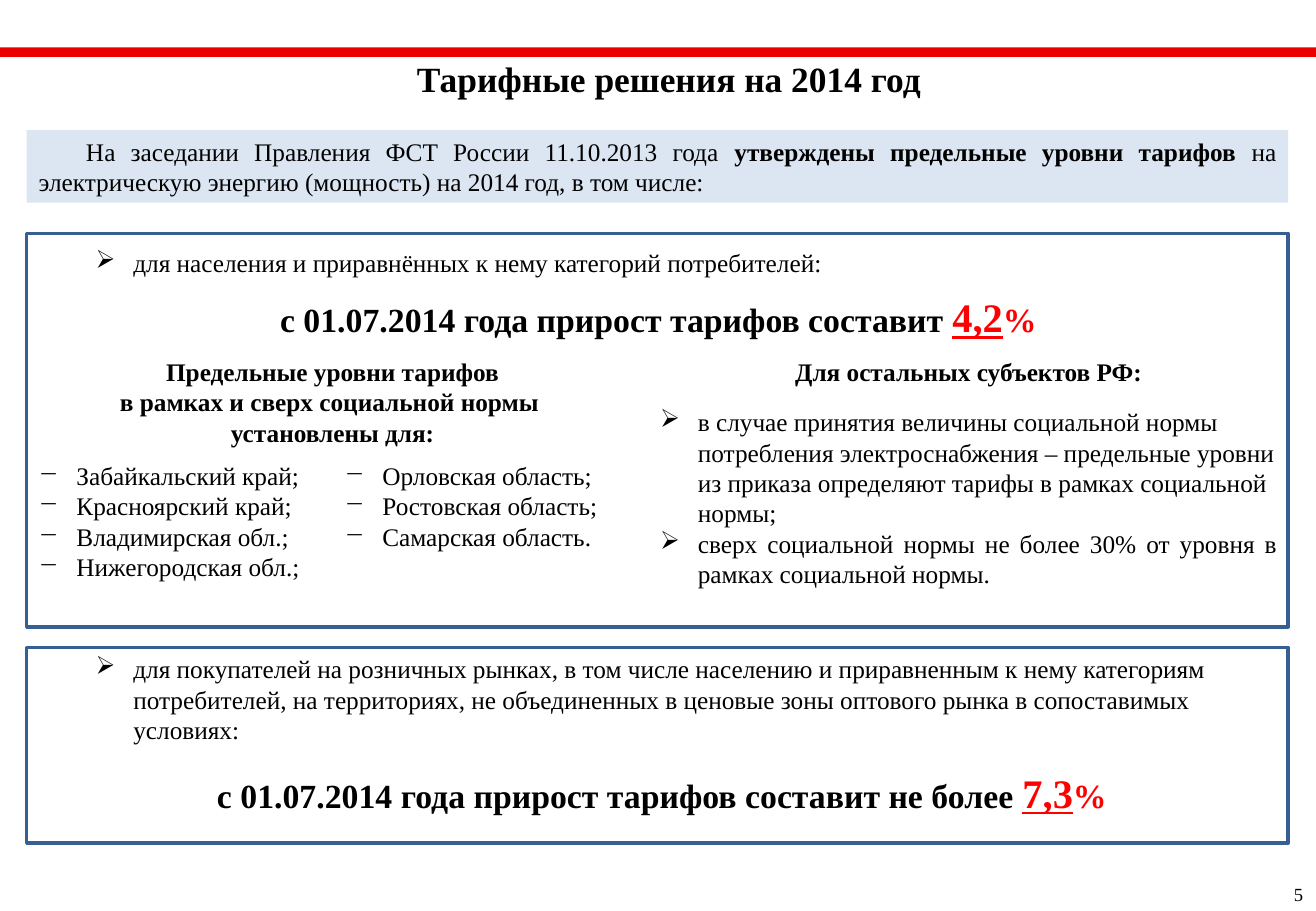
"""Builds the slide on the 2014 tariff decisions."""
from lxml import etree
from pptx import Presentation
from pptx import util as u
from pptx.dml.color import RGBColor
from pptx.enum import shapes, text
from pptx.oxml.ns import qn

COLORS = {"red_bar": "EB0000", "pale_blue": "DCE6F2", "frame": "376092",
          "black": "000000", "accent": "FF0000"}
STYLES = {
    "body": {"size": u.Pt(15), "bold": False},
    "strong": {"size": u.Pt(15), "bold": True},
    "title": {"size": u.Pt(21), "bold": True},
    "headline": {"size": u.Pt(20), "bold": True},
    "figure": {"size": u.Pt(24), "bold": True, "underline": True},
    "percent": {"size": u.Pt(20), "bold": True},
    "number": {"size": u.Pt(11), "bold": False},
}
CENTER, JUSTIFY = text.PP_ALIGN.CENTER, text.PP_ALIGN.JUSTIFY
LEFT, WIDTH = 0.56, 26.39
HANG = 0.79


def add_box(left, top, width, height, fill=None, line=None):
    shape = slide.shapes.add_shape(shapes.MSO_SHAPE.RECTANGLE, u.Cm(left), u.Cm(top),
                                   u.Cm(width), u.Cm(height))
    shape.shadow.inherit = False
    if fill:
        shape.fill.solid()
        shape.fill.fore_color.rgb = RGBColor.from_string(COLORS[fill])
    else:
        shape.fill.background()
    if line:
        shape.line.color.rgb = RGBColor.from_string(COLORS[line])
        shape.line.width = u.Pt(2)
    else:
        shape.line.fill.background()
    return shape


def write(shape, paragraphs, wrap=True, anchor=text.MSO_ANCHOR.TOP):
    frame = shape.text_frame
    frame.word_wrap, frame.vertical_anchor = wrap, anchor
    for index, (runs, layout) in enumerate(paragraphs):
        paragraph = frame.paragraphs[0] if index == 0 else frame.add_paragraph()
        paragraph.alignment = layout.get("align", text.PP_ALIGN.LEFT)
        if "before" in layout:
            paragraph.space_before = u.Pt(layout["before"])
        properties = paragraph._p.get_or_add_pPr()
        properties.set("marL", str(u.Cm(layout.get("margin", 0))))
        properties.set("indent", str(u.Cm(layout.get("indent", 0))))
        if "bullet" in layout:
            etree.SubElement(properties, qn("a:buChar")).set("char", layout["bullet"])
        for words, style in runs:
            run = paragraph.add_run()
            run.text = words
            run.font.name = "Times New Roman"
            color = "accent" if style in ("figure", "percent") else "black"
            run.font.color.rgb = RGBColor.from_string(COLORS[color])
            for name, value in STYLES[style].items():
                setattr(run.font, name, value)


presentation = Presentation()
presentation.slide_width, presentation.slide_height = u.Cm(27.53), u.Cm(19.05)
slide = presentation.slides.add_slide(presentation.slide_layouts[6])

add_box(0, 0.99, 27.53, 0.2, fill="red_bar")
intro = add_box(LEFT, 2.72, WIDTH, 1.52, fill="pale_blue")
write(intro, [([("На заседании Правления ФСТ России 11.10.2013 года ", "body"),
                ("утверждены предельные уровни тарифов ", "strong"),
                ("на электрическую энергию (мощность) на 2014 год, в том числе:", "body")],
               {"align": JUSTIFY, "indent": 0.99})], anchor=text.MSO_ANCHOR.MIDDLE)
for top, height in ((4.88, 8.23), (13.54, 4.09)):
    add_box(LEFT, top, WIDTH, height, line="frame")

centered = {"align": CENTER}
arrow = {"bullet": "➢", "margin": HANG, "indent": -HANG}
dash = {**arrow, "bullet": "−"}
deep_arrow = {**arrow, "margin": 1.98}

text_blocks = [
    ((2.36, 1.07, 23.27, 1.4), True,
     [([("Тарифные решения на 2014 год", "title")],
       {"align": CENTER, "margin": 0.13, "indent": -0.13})]),
    ((LEFT, 5.05, WIDTH, 0.89), True,
     [([("для населения и приравнённых к нему категорий потребителей:", "body")], deep_arrow)]),
    ((5.61, 5.99, 16.46, 1.7), False,
     [([("с 01.07.2014 года прирост тарифов составит ", "headline"),
        ("4,2", "figure"), ("%", "percent")], {})]),
    ((LEFT, 7.32, 12.8, 2.18), True,
     [([(line, "strong")], centered) for line in (
         "Предельные уровни тарифов", "в рамках и сверх социальной нормы ",
         "установлены для:")]),
    ((13.56, 7.32, 13.41, 5.64), True,
     [([("Для остальных субъектов РФ:", "strong")], centered),
      ([("в случае принятия величины социальной нормы потребления электроснабжения – "
         "предельные уровни из приказа определяют тарифы в рамках социальной нормы;", "body")],
       {**arrow, "before": 12}),
      ([("сверх социальной нормы не более 30% от уровня в рамках социальной нормы.", "body")],
       {**arrow, "align": JUSTIFY})]),
    ((LEFT, 13.54, WIDTH, 2.16), True,
     [([("для покупателей на розничных рынках, в том числе населению и приравненным к нему "
         "категориям потребителей, на территориях, не объединенных в ценовые зоны оптового "
         "рынка в сопоставимых условиях:", "body")], deep_arrow)]),
    ((4.29, 15.93, 19.28, 1.27), False,
     [([("с 01.07.2014 года прирост тарифов составит не более ", "headline"),
        ("7,3", "figure"), ("%", "percent")], {})]),
    ((26.82, 18.34, 0.71, 0.74), False, [([("5", "number")], {})]),
]
region_columns = [
    ("Забайкальский край;", "Красноярский край;", "Владимирская обл.;", "Нижегородская обл.;"),
    ("Орловская область;", "Ростовская область;", "Самарская область."),
]
for column, regions in enumerate(region_columns):
    text_blocks.append(((LEFT + column * 6.4, 9.5, 6.4, 2.82), True,
                        [([(region, "body")], dash) for region in regions]))

for place, wrap, paragraphs in text_blocks:
    write(slide.shapes.add_textbox(*[u.Cm(length) for length in place]), paragraphs, wrap)

presentation.save("out.pptx")
